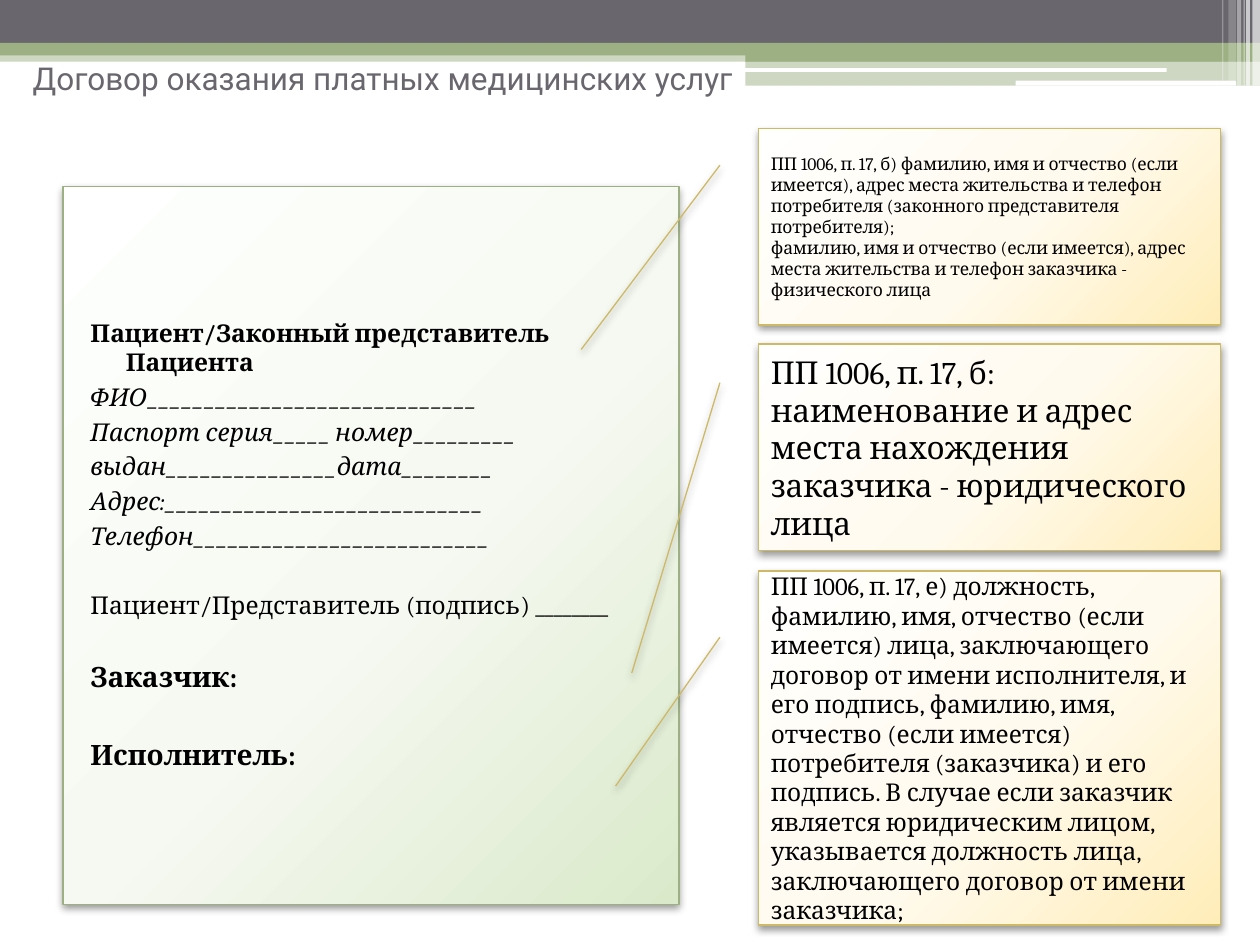
from pptx import Presentation
from pptx.dml.color import RGBColor
from pptx.enum.shapes import MSO_SHAPE
from pptx.enum.text import MSO_ANCHOR, PP_ALIGN
from pptx.oxml import parse_xml
from pptx.oxml.ns import nsdecls, qn
from pptx.util import Pt

RECT, ROUND, CALLOUT = MSO_SHAPE.RECTANGLE, MSO_SHAPE.ROUNDED_RECTANGLE, MSO_SHAPE.LINE_CALLOUT_1
LEFT, TOP, MIDDLE = PP_ALIGN.LEFT, MSO_ANCHOR.TOP, MSO_ANCHOR.MIDDLE

THEME = {
    "gray": "69676D", "green": "9CB084", "gold": "CEB966", "white": "FFFFFF", "black": "000000",
    "green_fade": ((0, "FEFFFE"), (55, "F6F9F2"), (100, "DAE9CA")),
    "gold_fade": ((0, "FFFFFE"), (55, "FFFAEE"), (100, "FFEDB9")),
    "title_font": "Roboto", "body_font": "Cambria",
    "title": 18, "form": 14, "heading": 16,
}


def add_panel(kind, box, fade, outline, anchor):
    panel = slide.shapes.add_shape(kind, *(Pt(v) for v in box))
    panel.fill.background()
    stops = "".join(
        f'<a:gs pos="{pos * 1000}"><a:srgbClr val="{color}"/></a:gs>' for pos, color in THEME[fade])
    gradient = parse_xml(
        f'<a:gradFill {nsdecls("a")} rotWithShape="1"><a:gsLst>{stops}</a:gsLst><a:path path="circle">'
        '<a:fillToRect l="-40000" t="-90000" r="140000" b="190000"/></a:path></a:gradFill>')
    properties = panel._element.spPr
    properties.replace(properties.find(qn("a:noFill")), gradient)
    panel.line.color.rgb = RGBColor.from_string(THEME[outline])
    panel.line.width = Pt(0.75)
    panel.shadow.inherit = False
    properties.find(qn("a:effectLst")).append(parse_xml(
        f'<a:outerShdw {nsdecls("a")} blurRad="{Pt(4.1)}" dist="{Pt(2)}" dir="5400000" rotWithShape="0">'
        '<a:srgbClr val="000000"><a:alpha val="40000"/></a:srgbClr></a:outerShdw>'))
    panel.text_frame.word_wrap = True
    panel.text_frame.vertical_anchor = anchor
    return panel


def add_text(paragraph, text, size, font="body_font", color="black", bold=False, italic=False):
    paragraph.alignment = LEFT
    run = paragraph.add_run()
    run.text = text
    run.font.name = THEME[font]
    run.font.size = Pt(size)
    run.font.bold = bold
    run.font.italic = italic
    run.font.color.rgb = RGBColor.from_string(THEME[color])


prs = Presentation()
prs.slide_width, prs.slide_height = Pt(720), Pt(540)
slide = prs.slides.add_slide(prs.slide_layouts[5])

title = slide.shapes.title
title.left, title.top, title.width, title.height = Pt(11.5), Pt(21.6), Pt(672.5), Pt(46)
title.text_frame.vertical_anchor = MIDDLE
add_text(title.text_frame.paragraphs[0], "Договор оказания платных медицинских услуг",
         THEME["title"], "title_font", "gray")

bands = [
    (RECT, 0, 28.8, 720, 6.5, "green", 50),
    (RECT, 0, 0, 720, 24.5, "gray", 100),
    (RECT, 0, 24.5, 720, 7.2, "green", 100),
    (RECT, 426, 28.1, 294, 7.2, "green", 100),
    (RECT, 426, 34.6, 294, 14.4, "green", 50),
    (ROUND, 425.5, 38.9, 241.2, 2.2, "white", 100),
    (ROUND, 580.3, 46.1, 126, 2.9, "white", 100),
    (RECT, 715.7, 0, 4.3, 49, "white", 65),
    (RECT, 712.1, 0, 2.2, 49, "white", 65),
    (RECT, 710.6, 0, 0.7, 49, "white", 60),
    (RECT, 707, 0, 2.2, 49, "white", 40),
    (RECT, 702, 0, 4.3, 46.1, "white", 20),
    (RECT, 698.4, 0, 0.7, 46.1, "white", 30),
]
for kind, left, top, width, height, color, opacity in bands:
    band = slide.shapes.add_shape(kind, Pt(left), Pt(top), Pt(width), Pt(height))
    band.fill.solid()
    band.fill.fore_color.rgb = RGBColor.from_string(THEME[color])
    band.line.fill.background()
    band.shadow.inherit = False
    if opacity < 100:
        tint = band._element.spPr.find(qn("a:solidFill"))[0]
        tint.append(parse_xml(f'<a:alpha {nsdecls("a")} val="{opacity * 1000}"/>'))

form = add_panel(RECT, (36, 106.6, 352, 410.4), "green_fade", "green", TOP)
form.text_frame.margin_top = Pt(75)
form_lines = [
    ("Пациент/Законный представитель Пациента", "form", True, False, 3),
    ("ФИО_____________________________", "form", False, True, 3),
    ("Паспорт серия_____ номер_________", "form", False, True, 3),
    ("выдан_______________дата________", "form", False, True, 3),
    ("Адрес:____________________________", "form", False, True, 3),
    ("Телефон__________________________", "form", False, True, 3),
    ("Пациент/Представитель (подпись) ________", "form", False, False, 23),
    ("Заказчик:", "heading", True, False, 23),
    ("Исполнитель:", "heading", True, False, 25),
]
for index, (text, size, bold, italic, gap) in enumerate(form_lines):
    frame = form.text_frame
    line = frame.add_paragraph() if index else frame.paragraphs[0]
    line.space_before = Pt(gap)
    indents = line._p.get_or_add_pPr()
    indents.set("marL", str(Pt(28.8)))
    indents.set("indent", str(Pt(-20.2)))
    add_text(line, text, THEME[size], bold=bold, italic=italic)

rules = [
    (73.4, 112.3, 10, (1.125, -0.3833), [
        "ПП 1006, п. 17, б) фамилию, имя и отчество (если имеется), адрес места жительства и телефон "
        "потребителя (законного представителя потребителя);",
        "фамилию, имя и отчество (если имеется), адрес места жительства и телефон заказчика - "
        "физического лица"]),
    (196.6, 118.1, 18, (1.592, -0.274), [
        "ПП 1006, п. 17, б: наименование и адрес места нахождения заказчика - юридического лица"]),
    (326.2, 202.3, 14, (0.608, -0.309), [
        "ПП 1006, п. 17, е) должность, фамилию, имя, отчество (если имеется) лица, заключающего "
        "договор от имени исполнителя, и его подпись, фамилию, имя, отчество (если имеется) "
        "потребителя (заказчика) и его подпись. В случае если заказчик является юридическим лицом, "
        "указывается должность лица, заключающего договор от имени заказчика;"]),
]
for top, height, size, target, texts in rules:
    rule = add_panel(CALLOUT, (433.4, top, 264.2, height), "gold_fade", "gold", MIDDLE)
    for index, value in enumerate((0.1875, -0.0833, *target)):
        rule.adjustments[index] = value
    for index, text in enumerate(texts):
        frame = rule.text_frame
        add_text(frame.add_paragraph() if index else frame.paragraphs[0], text, size)

prs.save("out.pptx")
